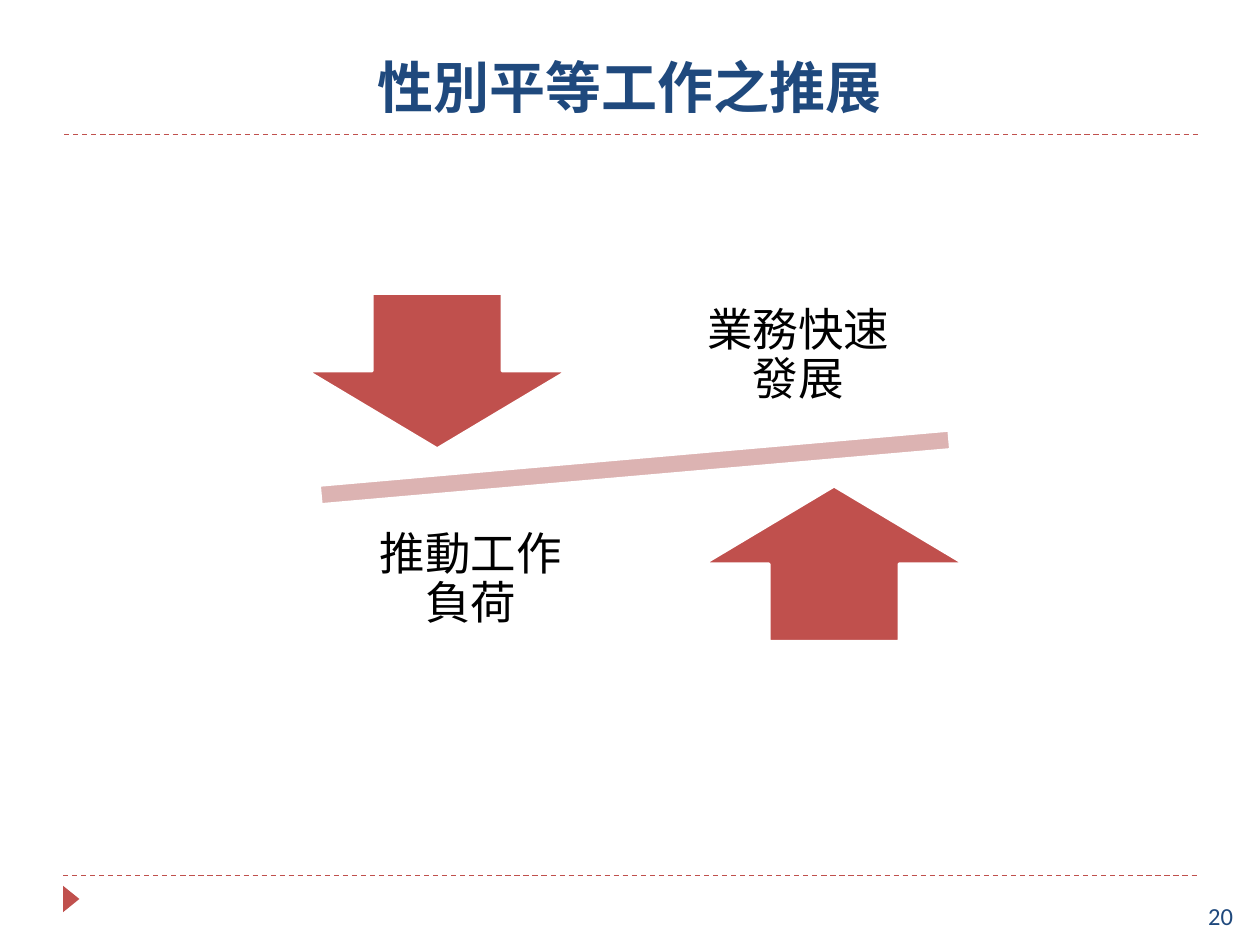
from dataclasses import dataclass

from lxml.etree import SubElement
from pptx import Presentation
from pptx.dml.color import RGBColor
from pptx.enum.dml import MSO_LINE
from pptx.enum.shapes import MSO_CONNECTOR, MSO_SHAPE
from pptx.enum.text import MSO_ANCHOR, PP_ALIGN
from pptx.oxml.ns import qn
from pptx.util import Inches, Pt


@dataclass(frozen=True)
class Theme:
    accent: RGBColor = RGBColor(0xC0, 0x50, 0x4D)
    pale: RGBColor = RGBColor(0xDC, 0xB3, 0xB2)
    heading: RGBColor = RGBColor(0x1F, 0x49, 0x7D)
    body: RGBColor = RGBColor(0, 0, 0)
    outline: RGBColor = RGBColor(0xFF, 0xFF, 0xFF)
    title_size: int = 32
    label_size: int = 26
    number_size: int = 14


@dataclass
class SlideBuilder:
    slide: object
    theme: Theme

    def rule(self, left, top, width):
        line = self.slide.shapes.add_connector(
            MSO_CONNECTOR.STRAIGHT,
            Inches(left), Inches(top), Inches(left + width), Inches(top))
        line.line.color.rgb = self.theme.accent
        line.line.width = Pt(0.75)
        line.line.dash_style = MSO_LINE.DASH
        SubElement(line._element.spPr, qn("a:effectLst"))

    def shape(self, kind, box, color, rotation=0, outlined=True):
        shape = self.slide.shapes.add_shape(kind, *map(Inches, box))
        shape.shadow.inherit = False
        shape.rotation = rotation
        shape.fill.solid()
        shape.fill.fore_color.rgb = color
        if outlined:
            shape.line.color.rgb = self.theme.outline
            shape.line.width = Pt(1.5)
        else:
            shape.line.fill.background()

    def text(self, words, box, font, size, color, bold=False,
             align=PP_ALIGN.CENTER, anchor=MSO_ANCHOR.TOP,
             inset=None, spacing=None):
        frame = self.slide.shapes.add_textbox(*map(Inches, box)).text_frame
        frame.word_wrap = True
        frame.vertical_anchor = anchor
        if inset is not None:
            frame.margin_left = frame.margin_right = Inches(inset)
            frame.margin_top = frame.margin_bottom = Inches(inset)
        paragraph = frame.paragraphs[0]
        paragraph.alignment = align
        paragraph.line_spacing = spacing
        run = paragraph.add_run()
        run.text = words
        run.font.name = font
        run.font.size = Pt(size)
        run.font.bold = bold
        run.font.color.rgb = color

    def label(self, words, left, top):
        self.text(words, (left, top, 2.19, 1.29), "Arial",
                  self.theme.label_size, self.theme.body,
                  anchor=MSO_ANCHOR.MIDDLE, inset=0.2, spacing=0.9)


def main():
    deck = Presentation()
    deck.slide_width, deck.slide_height = Inches(10), Inches(7.5)
    theme = Theme()
    page = SlideBuilder(deck.slides.add_slide(deck.slide_layouts[6]), theme)

    page.rule(0.5, 6.95, 9)
    page.rule(0.51, 1.07, 9)
    page.shape(MSO_SHAPE.ISOSCELES_TRIANGLE, (0.46, 7.07, 0.21, 0.13),
               theme.accent, rotation=90, outlined=False)
    page.text("性別平等工作之推展", (0.5, 0.17, 9, 0.83), "Roboto Slab",
              theme.title_size, theme.heading, bold=True,
              anchor=MSO_ANCHOR.BOTTOM)
    page.text("20", (9.49, 7.1, 0.51, 0.4), "Calibri",
              theme.number_size, theme.heading, align=PP_ALIGN.LEFT)

    page.shape(MSO_SHAPE.MATH_MINUS, (1.63, 3.39, 6.82, 0.64),
               theme.pale, rotation=355)
    page.shape(MSO_SHAPE.DOWN_ARROW, (2.44, 2.33, 2.06, 1.23), theme.accent)
    page.label("業務快速發展", 5.24, 2.18)
    page.shape(MSO_SHAPE.UP_ARROW, (5.59, 3.86, 2.06, 1.23), theme.accent)
    page.label("推動工作負荷", 2.64, 3.96)

    deck.save("out.pptx")


if __name__ == "__main__":
    main()
